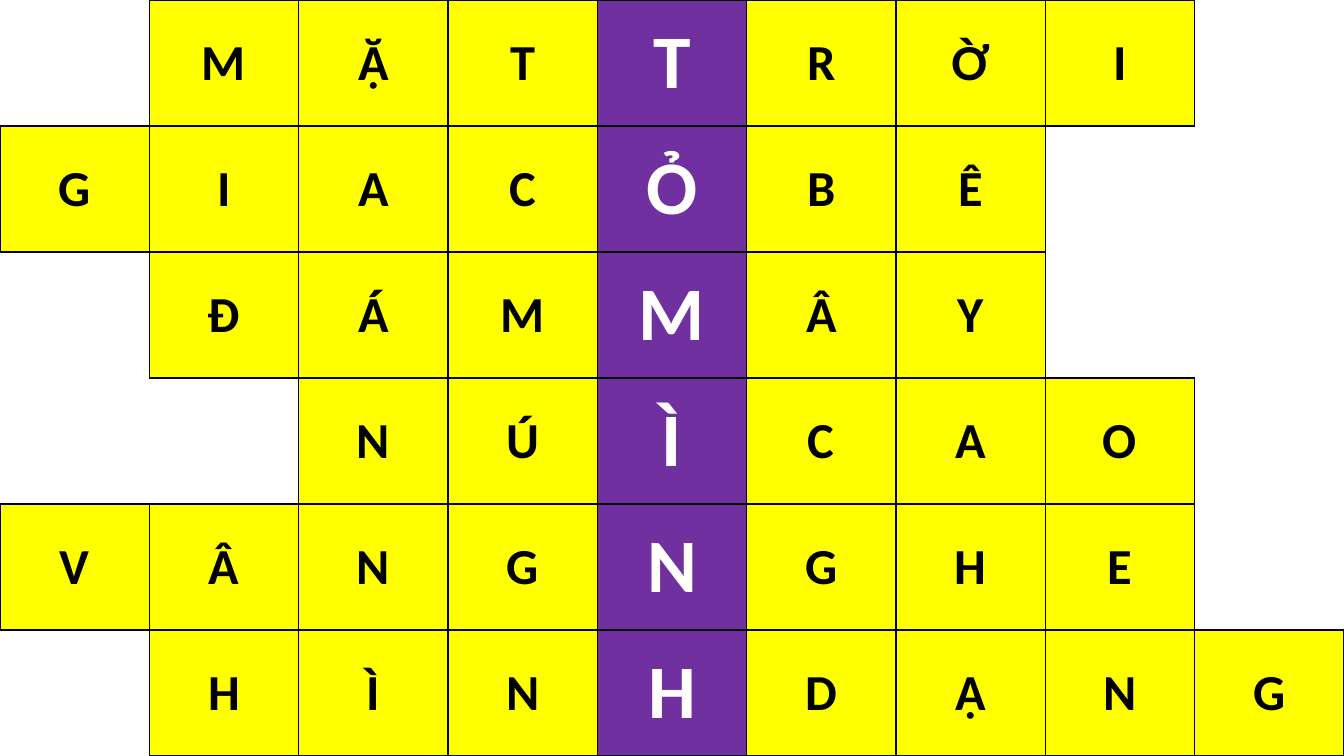
from lxml import etree
from pptx import Presentation
from pptx.dml.color import RGBColor
from pptx.enum import text
from pptx.oxml import ns
from pptx.util import Inches, Pt

YELLOW = RGBColor(0xFF, 0xFF, 0x00)
PURPLE = RGBColor(0x70, 0x30, 0xA0)
WHITE = RGBColor(0xFF, 0xFF, 0xFF)
BLACK = RGBColor(0x00, 0x00, 0x00)

# One answer per row; a dot is a blank square
ANSWERS = [
    ".MẶTTRỜI.",
    "GIACỎBÊ..",
    ".ĐÁMMÂY..",
    "..NÚÌCAO.",
    "VÂNGNGHE.",
    ".HÌNHDẠNG",
]
KEY_COL = 4
SIDES = {"lnL": (0, -1), "lnR": (0, 1), "lnT": (-1, 0), "lnB": (1, 0)}


def has_letter(row, col):
    return (0 <= row < len(ANSWERS) and 0 <= col < len(ANSWERS[0])
            and ANSWERS[row][col] != ".")


def set_borders(cell, row, col):
    """Rule every side that touches a lettered square."""
    tcPr = cell._tc.get_or_add_tcPr()
    for i, (tag, (dr, dc)) in enumerate(SIDES.items()):
        ln = etree.Element(ns.qn(f"a:{tag}"), w=str(Pt(1)))
        if has_letter(row, col) or has_letter(row + dr, col + dc):
            fill = etree.SubElement(ln, ns.qn("a:solidFill"))
            etree.SubElement(fill, ns.qn("a:srgbClr"), val=str(BLACK))
        else:
            etree.SubElement(ln, ns.qn("a:noFill"))
        tcPr.insert(i, ln)


def fill_cell(cell, row, col):
    is_key = col == KEY_COL
    cell.fill.solid()
    cell.fill.fore_color.rgb = WHITE
    if has_letter(row, col):
        cell.fill.fore_color.rgb = PURPLE if is_key else YELLOW
        cell.vertical_anchor = text.MSO_ANCHOR.MIDDLE
        p = cell.text_frame.paragraphs[0]
        p.text = ANSWERS[row][col]
        p.alignment = text.PP_ALIGN.CENTER
        p.font.name = "Calibri"
        p.font.bold = True
        p.font.size = Pt(54 if is_key else 36)
        p.font.color.rgb = WHITE if is_key else BLACK
    set_borders(cell, row, col)


def add_crossword(s, left, top, width, height):
    rows, cols = len(ANSWERS), len(ANSWERS[0])
    tbl = s.shapes.add_table(rows, cols, left, top, width, height).table
    tbl.first_row = tbl.horz_banding = False
    for row in range(rows):
        for col in range(cols):
            fill_cell(tbl.cell(row, col), row, col)


def main():
    prs = Presentation()
    prs.slide_width, prs.slide_height = Inches(13.33), Inches(7.5)
    s = prs.slides.add_slide(prs.slide_layouts[6])

    # Crossword over the whole slide
    add_crossword(s, 0, 0, prs.slide_width, prs.slide_height)
    prs.save("out.pptx")


if __name__ == "__main__":
    main()
